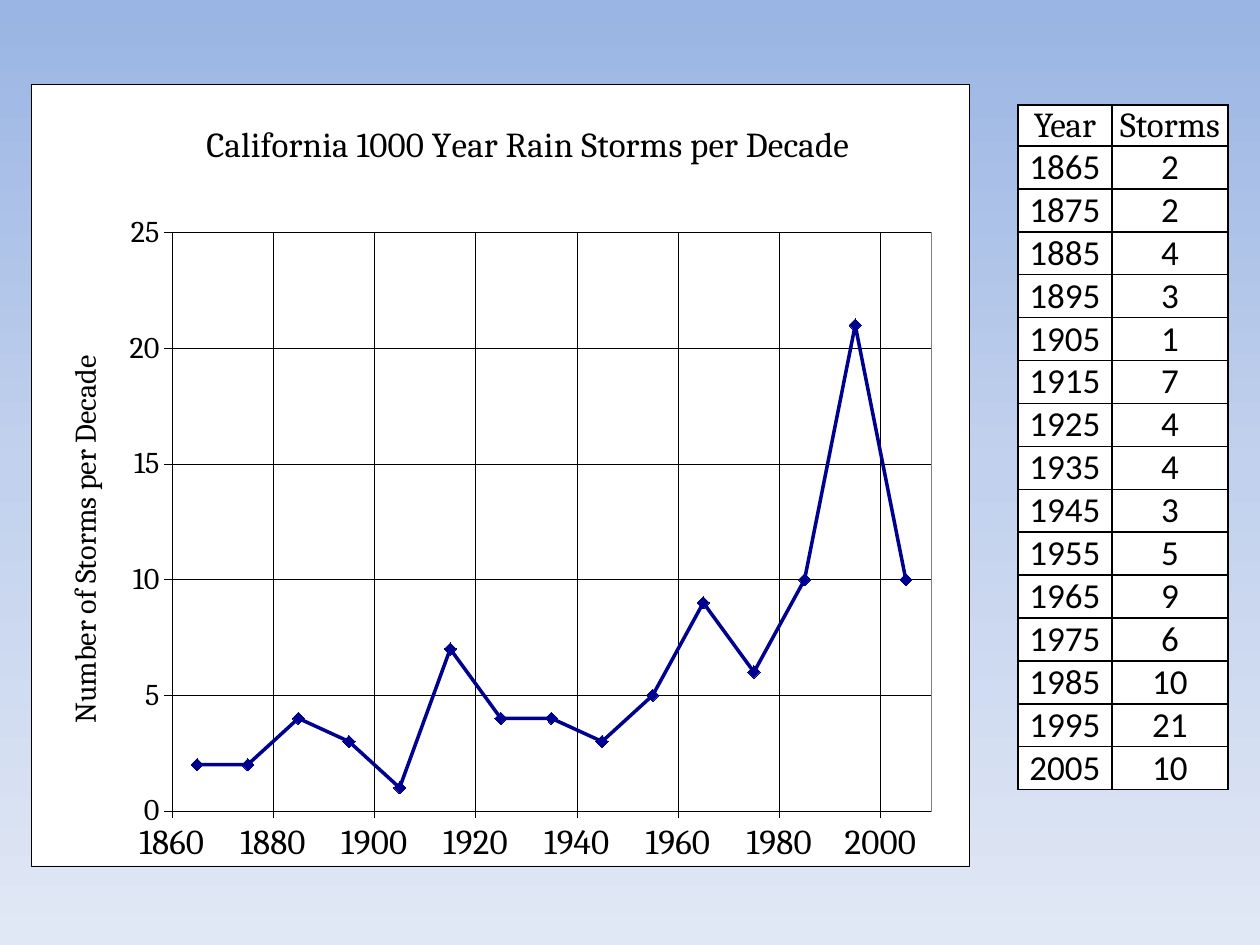
import copy
import lxml.etree
import pptx
import pptx.chart.data
import pptx.dml.color
import pptx.enum.chart
import pptx.enum.text
import pptx.oxml
import pptx.oxml.ns
import pptx.util

PX = 914400 / 126
COLORS = {
    "sky_top": "9AB5E4", "sky_middle": "C2D1ED", "sky_bottom": "E1E8F5",
    "ink": "000000", "paper": "FFFFFF", "frame": "808080",
    "storm_line": "000090", "storm_marker": "63AAFE",
}
rgb = {part: pptx.dml.color.RGBColor.from_string(value) for part, value in COLORS.items()}
qn = pptx.oxml.ns.qn
nsdecls = pptx.oxml.ns.nsdecls
chart_enum = pptx.enum.chart
storms_by_year = dict(zip(range(1865, 2006, 10), [2, 2, 4, 3, 1, 7, 4, 4, 3, 5, 9, 6, 10, 21, 10]))


def style_font(font, size, face="Cambria"):
    for attribute, value in {"size": pptx.util.Pt(size), "name": face, "bold": False}.items():
        setattr(font, attribute, value)
    font.color.rgb = rgb["ink"]


def place_in_chart(parent, position, index, target=""):
    for old_layout in parent.findall(qn("c:layout")):
        parent.remove(old_layout)
    layout = lxml.etree.Element(qn("c:layout"))
    manual = lxml.etree.SubElement(layout, qn("c:manualLayout"))
    settings = {"layoutTarget": target} if target else {}
    settings.update({"xMode": "edge", "yMode": "edge"})
    settings.update(zip("xywh", position))
    for tag, value in settings.items():
        lxml.etree.SubElement(manual, qn("c:" + tag)).set("val", str(value))
    parent.insert(index, layout)


presentation = pptx.Presentation()
presentation.slide_width = pptx.util.Inches(10)
presentation.slide_height = pptx.util.Inches(7.5)
slide = presentation.slides.add_slide(presentation.slide_layouts[6])

sky = slide.background.fill
sky.gradient()
sky.gradient_angle = 270
first_stop = sky.gradient_stops[0]._gs
first_stop.addnext(copy.deepcopy(first_stop))
for stop, (part, position) in zip(
    sky.gradient_stops, {"sky_top": 0, "sky_middle": 0.5, "sky_bottom": 1}.items()
):
    stop.color.rgb = rgb[part]
    stop.position = position

storm_data = pptx.chart.data.XyChartData()
storm_points = storm_data.add_series("Series 1")
for year, storms in storms_by_year.items():
    storm_points.add_data_point(year, storms)
chart = slide.shapes.add_chart(
    chart_enum.XL_CHART_TYPE.XY_SCATTER_LINES,
    *[int(length * PX) for length in (31, 84, 938, 782)], storm_data
).chart
style_font(chart.font, 17.2)
chart.has_legend = False
chart.plots[0].vary_by_categories = False

chart.has_title = True
chart.chart_title.text_frame.text = "California 1000 Year Rain Storms per Decade"
style_font(chart.chart_title.text_frame.paragraphs[0].runs[0].font, 20)
place_in_chart(chart.chart_title._element, (0.18, 0.04), 1)

axis_formats = {
    "category_axis": (20, {"minimum_scale": 1860, "maximum_scale": 2010, "major_unit": 20}),
    "value_axis": (17.2, {"minimum_scale": 0, "maximum_scale": 25, "major_unit": 5}),
}
for axis_name, (label_size, scale) in axis_formats.items():
    axis = getattr(chart, axis_name)
    scale.update(
        major_tick_mark=chart_enum.XL_TICK_MARK.CROSS,
        minor_tick_mark=chart_enum.XL_TICK_MARK.NONE,
        has_major_gridlines=True,
    )
    for attribute, value in scale.items():
        setattr(axis, attribute, value)
    style_font(axis.tick_labels.font, label_size)
    for line in (axis.format.line, axis.major_gridlines.format.line):
        line.color.rgb = rgb["ink"]
        line.width = pptx.util.Pt(0.25)

storm_title = chart.value_axis.axis_title
storm_title.text_frame.text = "Number of Storms per Decade"
style_font(storm_title.text_frame.paragraphs[0].runs[0].font, 17.2)
place_in_chart(storm_title._element, (0.03, 0.34), 1)

storm_series = chart.plots[0].series[0]
storm_series.smooth = False
storm_series.format.line.color.rgb = rgb["storm_line"]
storm_series.format.line.width = pptx.util.Pt(2)
storm_series.marker.style = chart_enum.XL_MARKER_STYLE.DIAMOND
storm_series.marker.size = 7
storm_series.marker.format.fill.solid()
storm_series.marker.format.fill.fore_color.rgb = rgb["storm_marker"]
storm_series.marker.format.line.color.rgb = rgb["storm_line"]

chart_body = chart._chartSpace.find(qn("c:chart"))
plot_area = chart_body.find(qn("c:plotArea"))
place_in_chart(plot_area, (0.15, 0.19, 0.81, 0.74), 0, "inner")
frame_xml = (
    f'<c:spPr {nsdecls("c", "a")}>%s<a:ln w="3175"><a:solidFill>'
    '<a:srgbClr val="%s"/></a:solidFill></a:ln></c:spPr>'
)
paper_xml = f'<a:solidFill><a:srgbClr val="{COLORS["paper"]}"/></a:solidFill>'
plot_area.append(pptx.oxml.parse_xml(frame_xml % ("<a:noFill/>", COLORS["frame"])))
chart_body.addnext(pptx.oxml.parse_xml(frame_xml % (paper_xml, COLORS["ink"])))

table_rows = [("Year", "Storms"), *storms_by_year.items()]
table = slide.shapes.add_table(
    len(table_rows), 2, *[int(length * PX) for length in (1018, 105, 210, 671)]
).table
table.first_row = False
table.horz_banding = False
for column, width in zip(table.columns, (94, 116)):
    column.width = int(width * PX)
cell_format = dict.fromkeys(("margin_left", "margin_right", "margin_top", "margin_bottom"), 0)
cell_format["vertical_anchor"] = pptx.enum.text.MSO_ANCHOR.BOTTOM
for row_index, entries in enumerate(table_rows):
    table.rows[row_index].height = int((42 if row_index else 41) * PX)
    for column_index, entry in enumerate(entries):
        cell = table.cell(row_index, column_index)
        cell.text = str(entry)
        for attribute, value in cell_format.items():
            setattr(cell, attribute, value)
        cell.fill.solid()
        cell.fill.fore_color.rgb = rgb["paper"]
        paragraph = cell.text_frame.paragraphs[0]
        paragraph.alignment = pptx.enum.text.PP_ALIGN.CENTER
        style_font(paragraph.runs[0].font, 20, "Calibri" if row_index else "Cambria")
        for order, side in enumerate("LRTB"):
            border = pptx.oxml.parse_xml(
                f'<a:ln{side} {nsdecls("a")} w="12700"><a:solidFill>'
                f'<a:srgbClr val="{COLORS["ink"]}"/></a:solidFill></a:ln{side}>'
            )
            cell._tc.get_or_add_tcPr().insert(order, border)

presentation.save("out.pptx")
